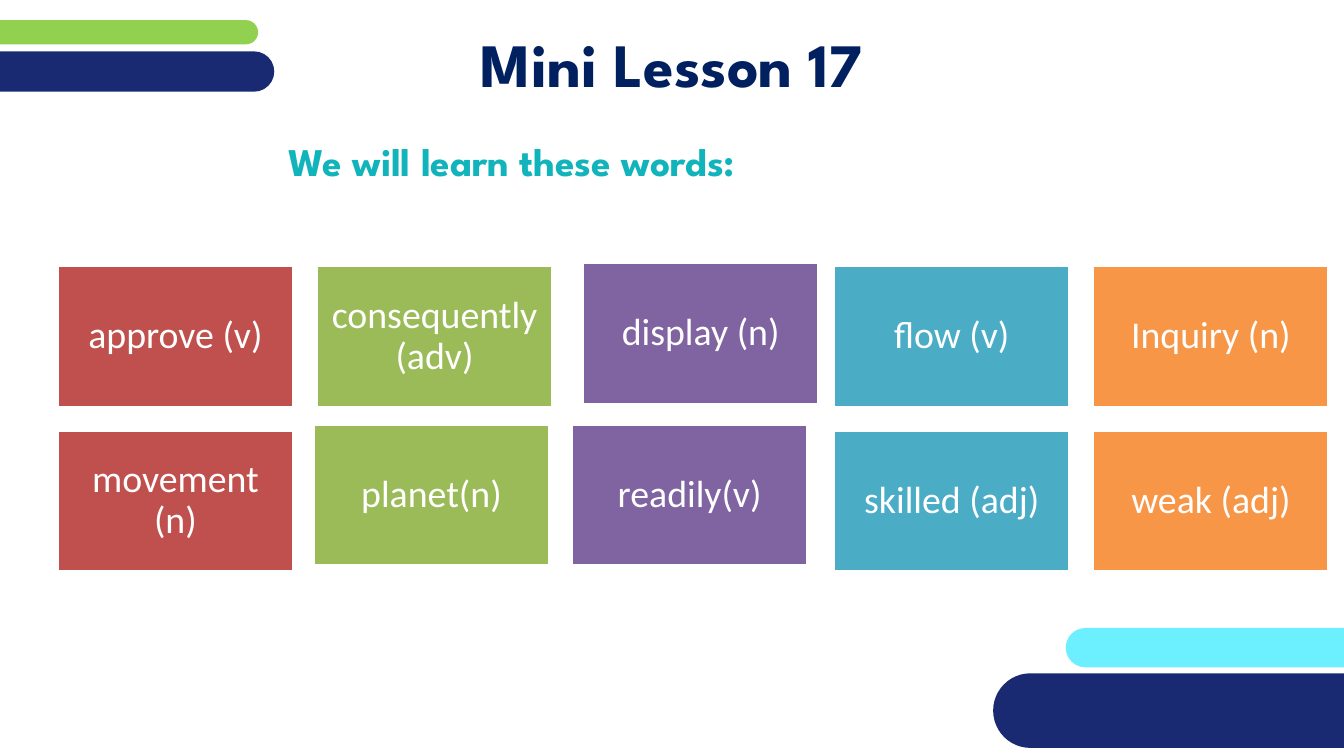
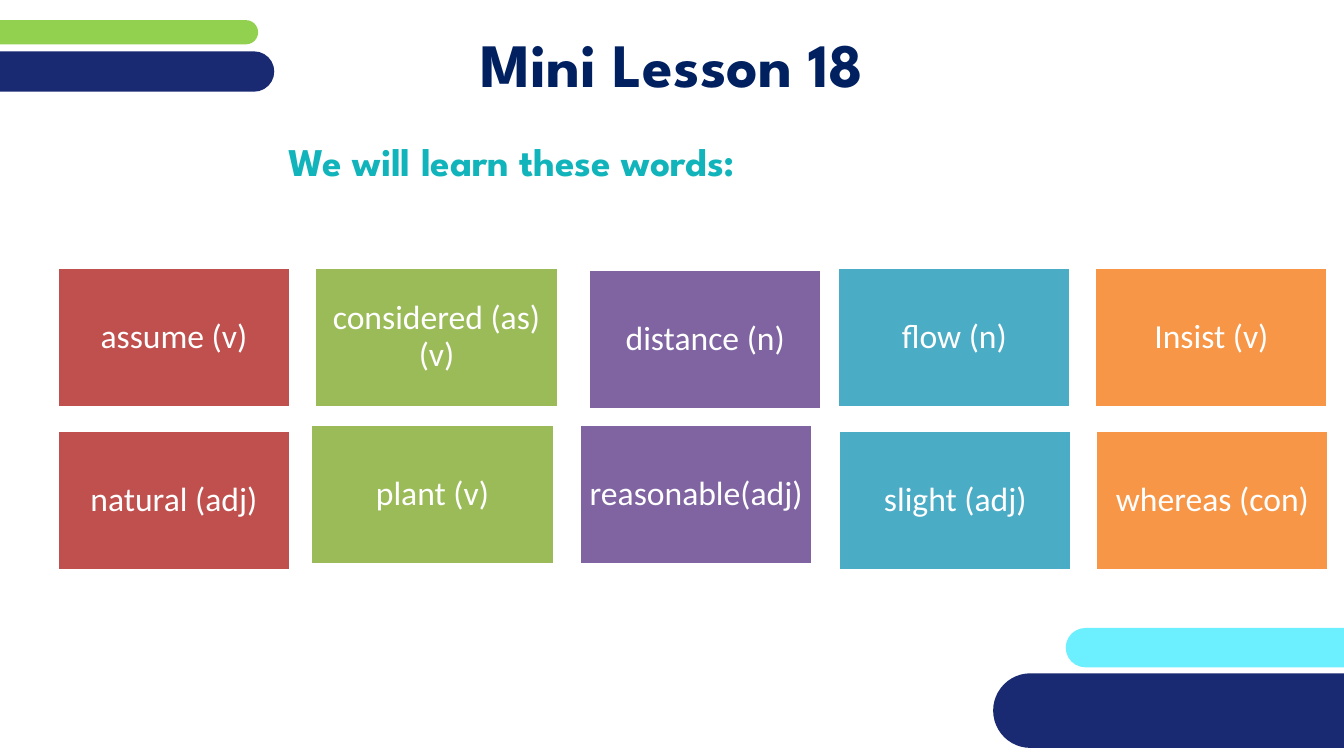
from typing import NamedTuple

import pptx
import pptx.util
from pptx.dml.color import RGBColor
from pptx.enum.shapes import MSO_SHAPE
from pptx.enum.text import MSO_ANCHOR, PP_ALIGN

EMU_PER_PX = 9144  # 100 px to the inch
SLIDE_W, SLIDE_H = 1333, 750

WHITE = RGBColor(0xFF, 0xFF, 0xFF)
NAVY = RGBColor(0x19, 0x2A, 0x72)
LIME = RGBColor(0x92, 0xD0, 0x50)
AQUA = RGBColor(0x6C, 0xF0, 0xFF)
TITLE_BLUE = RGBColor(0x00, 0x20, 0x60)
TEAL = RGBColor(0x12, 0xB4, 0xBC)
COLUMN_FILLS = (
    RGBColor(0xC0, 0x50, 0x4D),
    RGBColor(0x9B, 0xBB, 0x59),
    RGBColor(0x80, 0x64, 0xA2),
    RGBColor(0x4B, 0xAC, 0xC6),
    RGBColor(0xF7, 0x96, 0x46),
)
HEADING_FONT = "League Spartan"
CARD_FONT = "Calibri"


class Box(NamedTuple):
    left: int
    top: int
    width: int
    height: int


class Band(NamedTuple):
    box: Box
    fill: RGBColor


class TextStyle(NamedTuple):
    font: str
    size: int
    color: RGBColor
    bold: bool = False


class Card(NamedTuple):
    text: str
    left: int
    top: int


class Lesson(NamedTuple):
    title: str
    widths: tuple[int, ...]  # one per column
    height: int
    inset: int
    text_size: int
    rows: tuple[tuple[Card, ...], ...]


BANDS = (
    Band(Box(1057, 623, 521, 39), AQUA),
    Band(Box(-28, 20, 284, 24), LIME),
    Band(Box(-53, 51, 325, 40), NAVY),
    Band(Box(985, 668, 411, 74), NAVY),
)
TITLE_BOX = Box(0, 23, SLIDE_W, 79)
TITLE_STYLE = TextStyle(HEADING_FONT, 44, TITLE_BLUE, True)
SUBTITLE = "We will learn these words:"
SUBTITLE_BOX = Box(76, 130, 863, 59)
SUBTITLE_STYLE = TextStyle(HEADING_FONT, 28, TEAL, True)

LESSONS = (
    Lesson("Mini Lesson 17", (234,) * 5, 140, 12, 27, (
        (Card("approve (v)", 57, 264), Card("consequently (adv)", 314, 264),
         Card("display (n)", 578, 261), Card("flow (v)", 827, 264),
         Card("Inquiry (n)", 1084, 264)),
        (Card("movement (n)", 57, 427), Card("planet(n)", 311, 421),
         Card("readily(v)", 567, 421), Card("skilled (adj)", 827, 427),
         Card("weak (adj)", 1084, 427)),
    )),
    Lesson("Mini Lesson 18", (231, 242, 231, 231, 231), 139, 9, 24, (
        (Card("assume (v)", 57, 265), Card("considered (as) (v)", 312, 265),
         Card("distance (n)", 584, 267), Card("flow (n)", 831, 265),
         Card("Insist (v)", 1086, 265)),
        (Card("natural (adj)", 57, 427), Card("plant (v)", 308, 421),
         Card("reasonable(adj)", 575, 421), Card("slight (adj)", 832, 427),
         Card("whereas (con)", 1087, 427)),
    )),
)


def px(n: int) -> pptx.util.Emu:
    return pptx.util.Emu(n * EMU_PER_PX)


def place(box: Box) -> tuple[pptx.util.Emu, ...]:
    return tuple(px(n) for n in box)


def set_text(sp, text: str, style: TextStyle, inset: int = 10, line_spacing: float = 1.0) -> None:
    """Write one centred paragraph with the same inset on every side."""
    tf = sp.text_frame
    tf.word_wrap = True
    tf.vertical_anchor = MSO_ANCHOR.MIDDLE
    tf.margin_left = tf.margin_right = tf.margin_top = tf.margin_bottom = px(inset)
    p = tf.paragraphs[0]
    p.text = text
    p.alignment = PP_ALIGN.CENTER
    p.line_spacing = line_spacing
    p.font.name = style.font
    p.font.size = pptx.util.Pt(style.size)
    p.font.bold = style.bold
    p.font.color.rgb = style.color


def add_filled(slide, kind: MSO_SHAPE, box: Box, fill: RGBColor):
    sp = slide.shapes.add_shape(kind, *place(box))
    sp.shadow.inherit = False
    sp.fill.solid()
    sp.fill.fore_color.rgb = fill
    sp.line.fill.background()
    return sp


def add_heading(slide, text: str, box: Box, style: TextStyle) -> None:
    set_text(slide.shapes.add_textbox(*place(box)), text, style)


def add_frame(slide, title: str) -> None:
    """Draw what every lesson shares: bands, title and subtitle."""
    for band in BANDS:
        sp = add_filled(slide, MSO_SHAPE.ROUNDED_RECTANGLE, band.box, band.fill)
        sp.adjustments[0] = 0.5
    add_heading(slide, title, TITLE_BOX, TITLE_STYLE)
    add_heading(slide, SUBTITLE, SUBTITLE_BOX, SUBTITLE_STYLE)


def add_cards(slide, lesson: Lesson) -> None:
    style = TextStyle(CARD_FONT, lesson.text_size, WHITE)
    for row in lesson.rows:
        for card, width, fill in zip(row, lesson.widths, COLUMN_FILLS):
            box = Box(card.left, card.top, width, lesson.height)
            sp = add_filled(slide, MSO_SHAPE.RECTANGLE, box, fill)
            sp.line.color.rgb = WHITE
            sp.line.width = pptx.util.Pt(2)
            set_text(sp, card.text, style, lesson.inset, 0.9)


def main() -> None:
    prs = pptx.Presentation()
    prs.slide_width, prs.slide_height = px(SLIDE_W), px(SLIDE_H)
    for lesson in LESSONS:
        slide = prs.slides.add_slide(prs.slide_layouts[6])
        add_frame(slide, lesson.title)
        add_cards(slide, lesson)
    prs.save("out.pptx")


if __name__ == "__main__":
    main()
